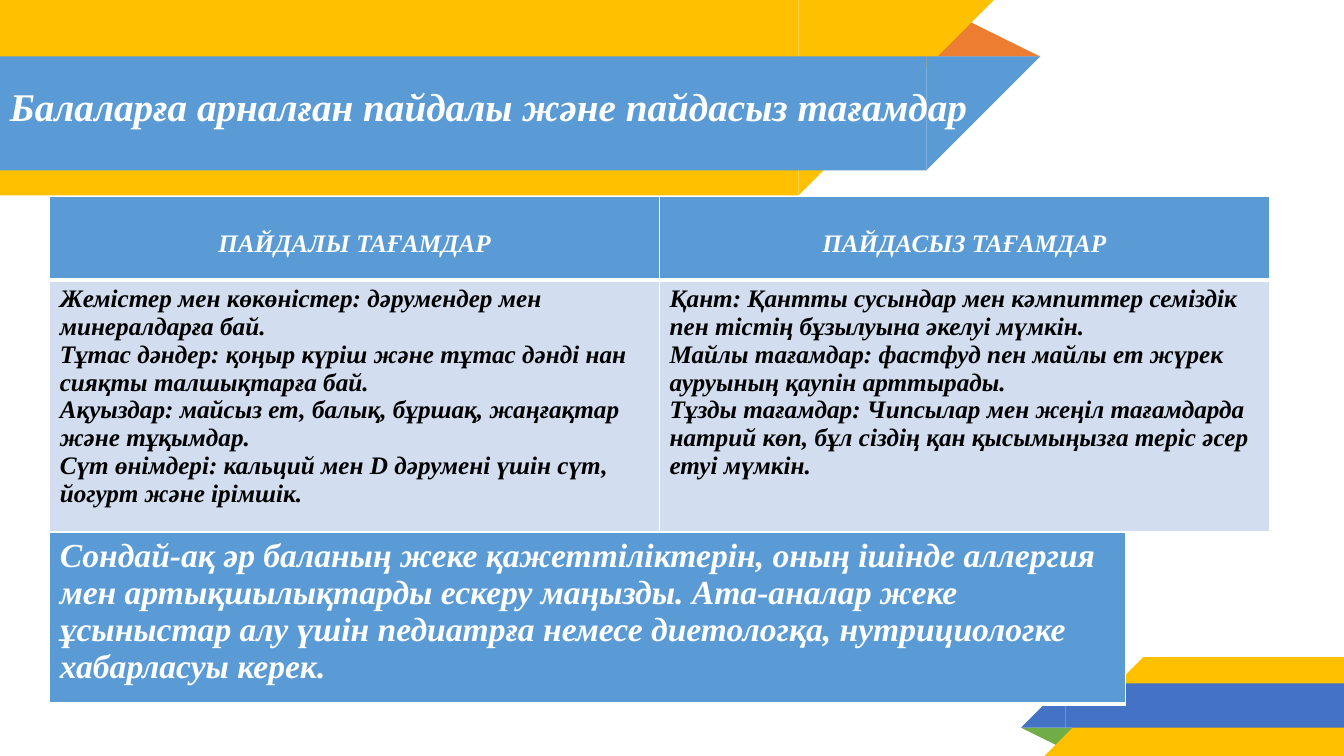
"""Build a slide on healthy and unhealthy foods for children."""
from dataclasses import dataclass

from lxml import etree
from pptx import Presentation
from pptx.dml.color import RGBColor
from pptx.enum import shapes, text
from pptx.oxml import ns
from pptx.util import Pt

WHITE = RGBColor(0xFF, 0xFF, 0xFF)
BLACK = RGBColor(0x00, 0x00, 0x00)
GOLD = RGBColor(0xFF, 0xC0, 0x00)
SKY = RGBColor(0x5B, 0x9B, 0xD5)
PALE = RGBColor(0xD2, 0xDE, 0xEF)
ROYAL = RGBColor(0x44, 0x72, 0xC4)
GREEN = RGBColor(0x70, 0xAD, 0x47)
ORANGE = RGBColor(0xED, 0x7D, 0x31)
FONT = "Times New Roman"
SLIDE_WIDTH, SLIDE_HEIGHT = 960, 540
TABLE_LEFT = 35.5


@dataclass
class Band:
    """A bar ending in a 45-degree slant."""
    color: RGBColor
    left: float
    top: float
    width: float
    height: float


@dataclass
class Fold:
    """The small triangle behind a band."""
    color: RGBColor
    left: float
    top: float
    width: float
    height: float
    rotation: int


@dataclass
class CellStyle:
    """The look of one table row."""
    fill: RGBColor
    color: RGBColor
    size: float
    top_border: float
    bottom_border: float
    align: text.PP_ALIGN = text.PP_ALIGN.LEFT
    margin_top: float = 3.6


HEADING = CellStyle(SKY, WHITE, 18, 1, 3, text.PP_ALIGN.CENTER, 23.6)
FOODS = CellStyle(PALE, BLACK, 18, 3, 1)
ADVICE = CellStyle(SKY, WHITE, 24, 1, 3)

FOLDS = [Fold(GREEN, 729.4, 519.8, 41, 13.7, 180), Fold(ORANGE, 661, 13, 82.1, 27.4, 0)]
BANDS = [
    Band(GOLD, 816.5, 469.4, 143.5, 70.6),
    Band(ROYAL, 761, 488.1, 199, 31.7),
    Band(GOLD, 0, 0, 570.2, 139.7),
    Band(SKY, 0, 40.3, 661.7, 81.4),
]
TITLE = "Балаларға арналған пайдалы және пайдасыз тағамдар"
HEADINGS = [["ПАЙДАЛЫ ТАҒАМДАР"], ["ПАЙДАСЫЗ ТАҒАМДАР"]]
FOOD_LISTS = [
    [
        "Жемістер мен көкөністер: дәрумендер мен минералдарға бай.",
        "Тұтас дәндер: қоңыр күріш және тұтас дәнді нан сияқты талшықтарға бай.",
        "Ақуыздар: майсыз ет, балық, бұршақ, жаңғақтар және тұқымдар.",
        "Сүт өнімдері: кальций мен D дәрумені үшін сүт, йогурт және ірімшік.",
    ],
    [
        "Қант: Қантты сусындар мен кәмпиттер семіздік пен тістің бұзылуына әкелуі мүмкін.",
        "Майлы тағамдар: фастфуд пен майлы ет жүрек ауруының қаупін арттырады.",
        "Тұзды тағамдар: Чипсылар мен жеңіл тағамдарда натрий көп, "
        "бұл сіздің қан қысымыңызға теріс әсер етуі мүмкін.",
    ],
]
ADVICE_TEXT = (
    "Сондай-ақ әр баланың жеке қажеттіліктерін, оның ішінде аллергия мен артықшылықтарды "
    "ескеру маңызды. Ата-аналар жеке ұсыныстар алу үшін педиатрға немесе диетологқа, "
    "нутрициологке хабарласуы керек."
)


def add_solid(slide, kind, color: RGBColor, left: float, top: float,
              width: float, height: float, rotation: int = 0):
    """Add a plain filled shape."""
    solid = slide.shapes.add_shape(kind, Pt(left), Pt(top), Pt(width), Pt(height))
    solid.shadow.inherit = False
    solid.fill.solid()
    solid.fill.fore_color.rgb = color
    solid.line.fill.background()
    solid.rotation = rotation
    return solid


def add_fold(slide, fold: Fold) -> None:
    """Add a triangle with its tip off centre."""
    triangle = add_solid(slide, shapes.MSO_SHAPE.ISOSCELES_TRIANGLE, fold.color, fold.left,
                         fold.top, fold.width, fold.height, fold.rotation)
    triangle.adjustments[0] = 0.324


def add_band(slide, band: Band) -> None:
    """Add a bar and the slanted end facing the slide's middle."""
    add_solid(slide, shapes.MSO_SHAPE.RECTANGLE, band.color,
              band.left, band.top, band.width, band.height)
    from_left = band.left == 0
    slant_left = band.width if from_left else band.left - band.height
    add_solid(slide, shapes.MSO_SHAPE.RIGHT_TRIANGLE, band.color, slant_left, band.top,
              band.height, band.height, 90 if from_left else 270)


def set_font(paragraph, size: float, color: RGBColor) -> None:
    """Apply the slide's bold italic font."""
    font = paragraph.font
    font.name, font.size, font.bold, font.italic = FONT, Pt(size), True, True
    font.color.rgb = color


def add_title(slide) -> None:
    """Add the heading over the blue band."""
    title = slide.shapes.add_textbox(Pt(0), Pt(15.1), Pt(725.8), Pt(125.3))
    frame = title.text_frame
    frame.word_wrap = True
    frame.vertical_anchor = text.MSO_ANCHOR.MIDDLE
    frame.text = TITLE
    frame.paragraphs[0].line_spacing = 0.9
    set_font(frame.paragraphs[0], 28, WHITE)


def set_borders(cell, style: CellStyle) -> None:
    """Draw white borders around a cell."""
    properties = cell._tc.get_or_add_tcPr()
    widths = {"a:lnL": 1, "a:lnR": 1, "a:lnT": style.top_border, "a:lnB": style.bottom_border}
    for position, (tag, width) in enumerate(widths.items()):
        border = etree.Element(ns.qn(tag), w=str(Pt(width)))
        fill = etree.SubElement(border, ns.qn("a:solidFill"))
        etree.SubElement(fill, ns.qn("a:srgbClr"), val=str(WHITE))
        properties.insert(position, border)


def fill_cell(cell, lines: list[str], style: CellStyle) -> None:
    """Write and style one cell."""
    cell.text = "\n".join(lines)
    cell.margin_top = Pt(style.margin_top)
    cell.fill.solid()
    cell.fill.fore_color.rgb = style.fill
    set_borders(cell, style)
    for paragraph in cell.text_frame.paragraphs:
        paragraph.alignment = style.align
        set_font(paragraph, style.size, style.color)


def add_food_table(slide, top: float, width: float, heights: list[float],
                   rows: list[list[list[str]]], styles: list[CellStyle]) -> None:
    """Add a table whose columns share the width equally."""
    table = slide.shapes.add_table(len(rows), len(rows[0]), Pt(TABLE_LEFT), Pt(top),
                                   Pt(width), Pt(sum(heights))).table
    table.horz_banding = False
    for table_row, height, contents, style in zip(table.rows, heights, rows, styles):
        table_row.height = Pt(height)
        for cell, lines in zip(table_row.cells, contents):
            fill_cell(cell, lines, style)


def main() -> None:
    """Build and save the slide."""
    deck = Presentation()
    deck.slide_width, deck.slide_height = Pt(SLIDE_WIDTH), Pt(SLIDE_HEIGHT)
    slide = deck.slides.add_slide(deck.slide_layouts[6])
    for fold in FOLDS:
        add_fold(slide, fold)
    for band in BANDS:
        add_band(slide, band)
    add_title(slide)
    add_food_table(slide, 140.4, 871.2, [59.5, 172], [HEADINGS, FOOD_LISTS], [HEADING, FOODS])
    add_food_table(slide, 380.2, 768.2, [103.7], [[[ADVICE_TEXT]]], [ADVICE])
    deck.save("out.pptx")


if __name__ == "__main__":
    main()
